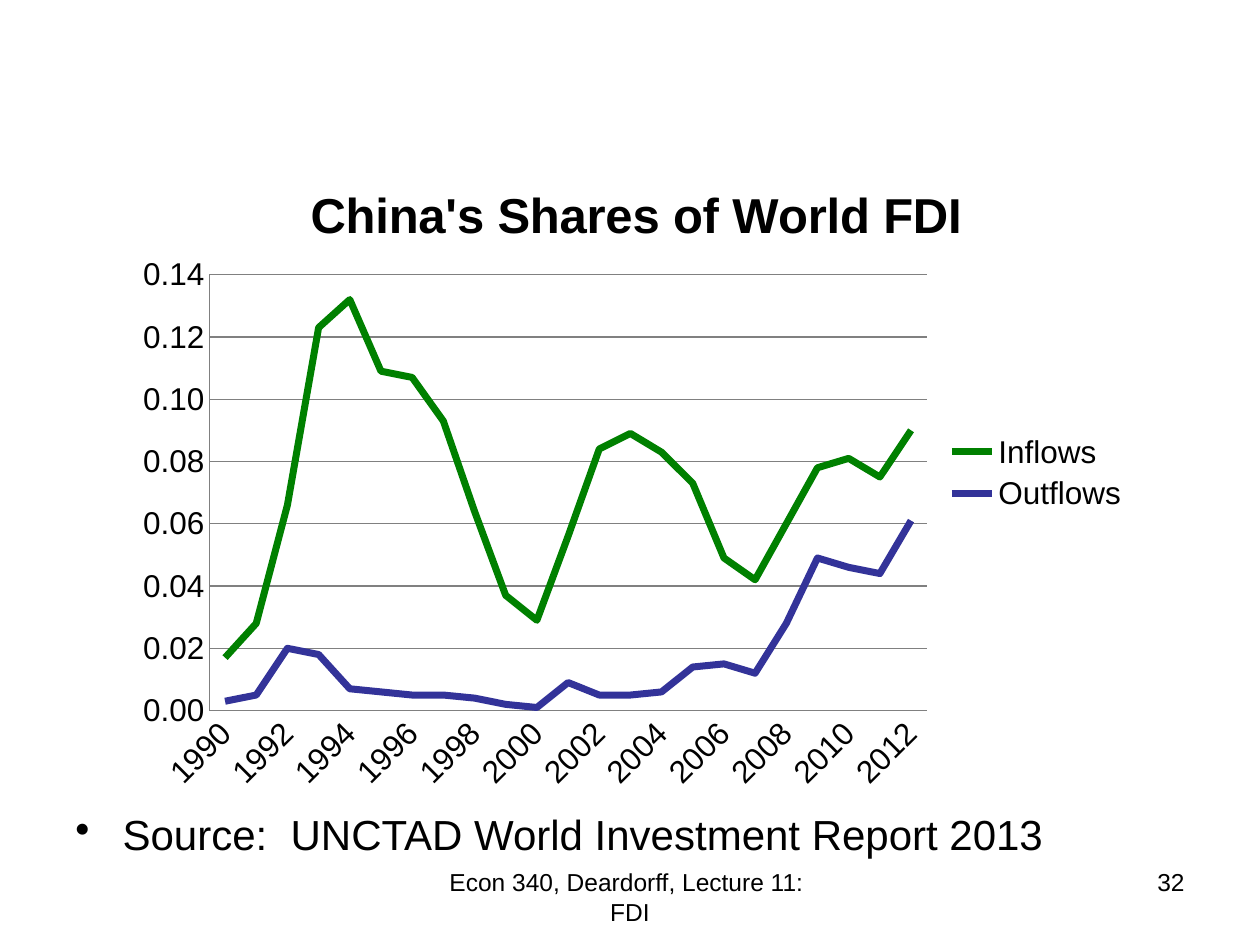
from lxml.etree import SubElement
from pptx import Presentation
from pptx.chart.data import CategoryChartData
from pptx.dml.color import RGBColor
from pptx.enum.chart import XL_CHART_TYPE, XL_LEGEND_POSITION, XL_TICK_MARK
from pptx.enum.text import PP_ALIGN
from pptx.oxml import parse_xml
from pptx.oxml.ns import nsdecls, qn
from pptx.util import Pt

FONT = "Arial"
COLORS = {"text": "000000", "inflows": "008000", "outflows": "333399", "grid": "808080"}
YEARS = [str(year) for year in range(1990, 2013)]
SHARES = {
    "Inflows": (0.017, 0.028, 0.066, 0.123, 0.132, 0.109, 0.107, 0.093, 0.064, 0.037, 0.029, 0.056,
                0.084, 0.089, 0.083, 0.073, 0.049, 0.042, 0.06, 0.078, 0.081, 0.075, 0.09),
    "Outflows": (0.003, 0.005, 0.02, 0.018, 0.007, 0.006, 0.005, 0.005, 0.004, 0.002, 0.001, 0.009,
                 0.005, 0.005, 0.006, 0.014, 0.015, 0.012, 0.028, 0.049, 0.046, 0.044, 0.061),
}


def color(name):
    """Return the named colour."""
    return RGBColor.from_string(COLORS[name])


def style_font(font, size, bold=False):
    """Apply the slide's typeface and text colour."""
    font.name, font.size, font.bold = FONT, Pt(size), bold
    font.color.rgb = color("text")


def style_line(line, name, width):
    """Give a line its colour and width."""
    line.color.rgb = color(name)
    line.width = Pt(width)


def add_text(slide, box, text, size, align=PP_ALIGN.LEFT):
    """Add a wrapped text box and return its paragraph."""
    frame = slide.shapes.add_textbox(*map(Pt, box)).text_frame
    frame.word_wrap = True
    paragraph = frame.paragraphs[0]
    paragraph.alignment = align
    run = paragraph.add_run()
    run.text = text
    style_font(run.font, size)
    return paragraph


def make_bullet(paragraph, indent):
    """Turn a paragraph into a bullet with a hanging indent."""
    paragraph.line_spacing = 0.9
    paragraph.space_before = Pt(4.8)
    properties = paragraph._p.get_or_add_pPr()
    properties.set("marL", str(Pt(indent)))
    properties.set("indent", str(-Pt(indent)))
    SubElement(properties, qn("a:buChar")).set("char", "•")


def place_part(part, index, **fractions):
    """Place a chart part by fractions of the chart's size."""
    for previous in part.findall(qn("c:layout")):
        part.remove(previous)
    target = '<c:layoutTarget val="inner"/>' if "w" in fractions else ""
    modes = "".join(f'<c:{key}Mode val="edge"/>' for key in fractions if key in "xy")
    values = "".join(f'<c:{key} val="{value}"/>' for key, value in fractions.items())
    part.insert(index, parse_xml(
        f'<c:layout {nsdecls("c")}><c:manualLayout>{target}{modes}{values}'
        "</c:manualLayout></c:layout>"))


def style_axis(axis):
    """Style the labels and line shared by both axes."""
    axis.major_tick_mark = axis.minor_tick_mark = XL_TICK_MARK.NONE
    style_font(axis.tick_labels.font, 18)
    style_line(axis.format.line, "grid", 0.75)


def format_axes(chart):
    """Set the share scale and the slanted two-year labels."""
    shares, years = chart.value_axis, chart.category_axis
    for axis in (shares, years):
        style_axis(axis)
    shares.minimum_scale, shares.maximum_scale, shares.major_unit = 0, 0.14, 0.02
    shares.tick_labels.number_format = "0.00"
    shares.tick_labels.number_format_is_linked = False
    style_line(shares.major_gridlines.format.line, "grid", 0.75)
    years_xml = years._element
    years_xml.find(qn("c:txPr")).find(qn("a:bodyPr")).set("rot", "-2700000")
    years_xml.find(qn("c:lblOffset")).addnext(
        parse_xml(f'<c:tickLblSkip {nsdecls("c")} val="2"/>'))


def add_share_chart(slide, box):
    """Add the line chart of FDI shares."""
    data = CategoryChartData(number_format="0.000")
    data.categories = YEARS
    for name, values in SHARES.items():
        data.add_series(name, values)
    chart = slide.shapes.add_chart(XL_CHART_TYPE.LINE, *map(Pt, box), data).chart
    style_font(chart.font, 10)
    heading = chart.chart_title.text_frame.paragraphs[0].add_run()
    heading.text = "China's Shares of World FDI"
    style_font(heading.font, 28, bold=True)
    chart.has_legend = True
    chart.legend.position = XL_LEGEND_POSITION.RIGHT
    chart.legend.include_in_layout = False
    style_font(chart.legend.font, 18)
    chart.plots[0].vary_by_categories = False
    for series in chart.plots[0].series:
        series.smooth = False
        style_line(series.format.line, series.name.lower(), 4)
    format_axes(chart)
    place_part(chart.chart_title._element, 1, x=0.18, y=0.05)
    place_part(chart._chartSpace.chart.plotArea, 0, x=0.09, y=0.2, w=0.7, h=0.66)


def main():
    """Build and save the slide."""
    deck = Presentation()
    deck.slide_width, deck.slide_height = Pt(720), Pt(540)
    slide = deck.slides.add_slide(deck.slide_layouts[6])
    add_text(slide, (246, 492, 228, 37.5), "Econ 340, Deardorff, Lecture 11:  FDI", 14, PP_ALIGN.CENTER)
    add_text(slide, (516, 492, 168, 37.5), "32", 14, PP_ALIGN.RIGHT)
    source = add_text(slide, (36, 462, 626, 35), "Source:  UNCTAD World Investment Report 2013", 24)
    make_bullet(source, 27)
    add_share_chart(slide, (67, 81.5, 585.5, 377.5))
    deck.save("out.pptx")


if __name__ == "__main__":
    main()
